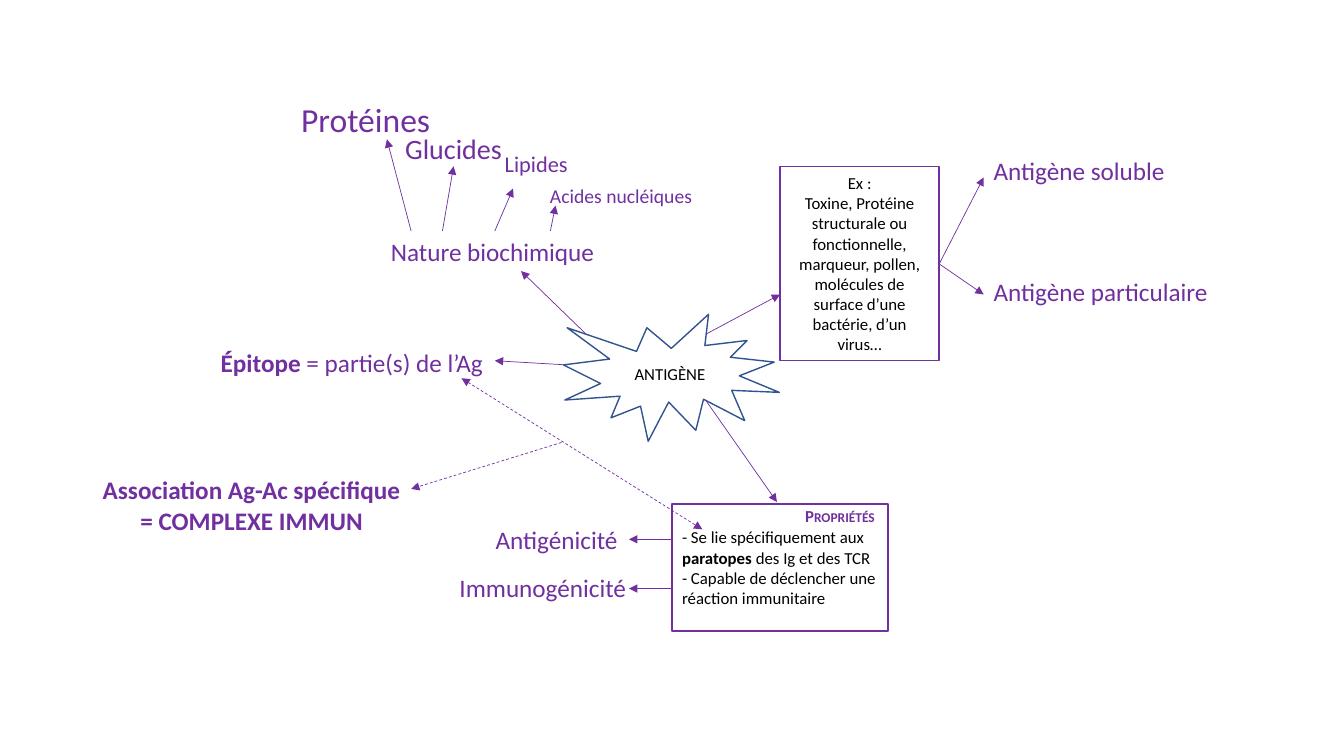
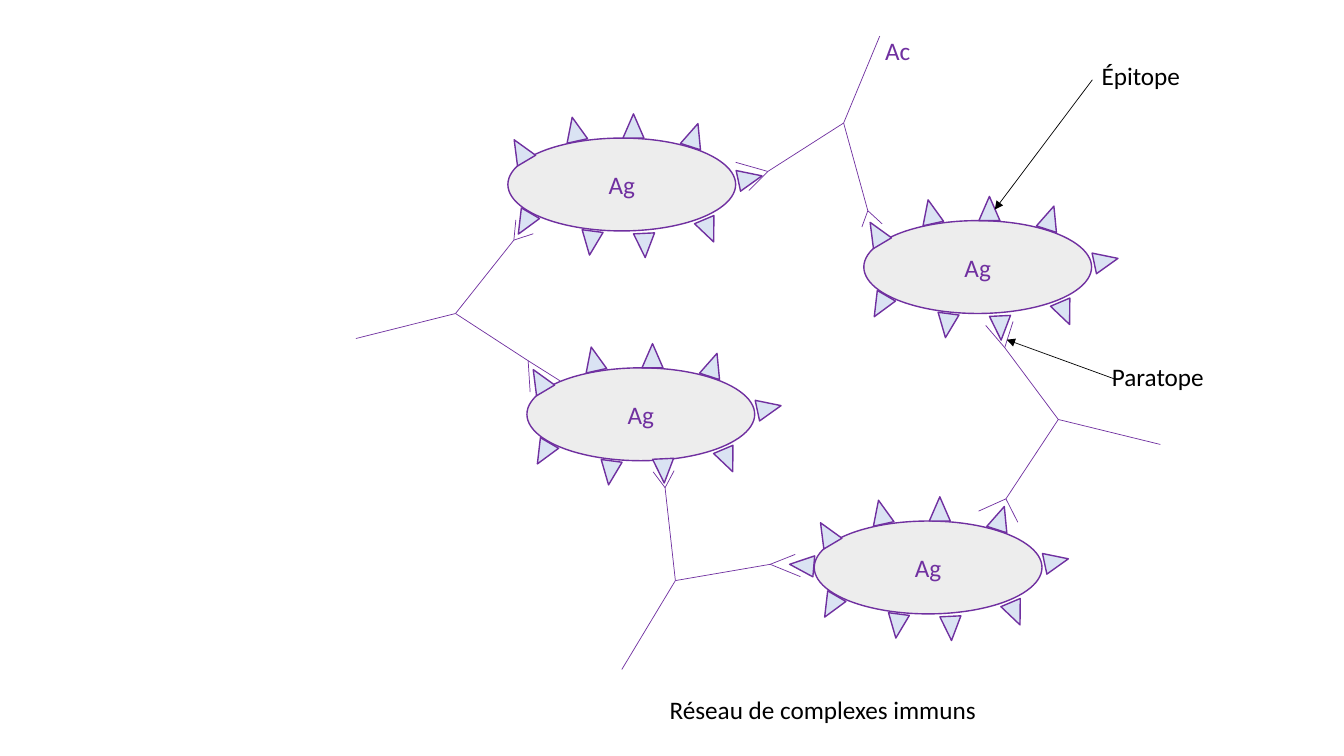
from dataclasses import dataclass
from typing import NamedTuple

from pptx import Presentation
from pptx.dml.color import RGBColor
from pptx.enum.dml import MSO_LINE
from pptx.enum.shapes import MSO_CONNECTOR, MSO_SHAPE
from pptx.enum.text import MSO_ANCHOR, MSO_AUTO_SIZE, PP_ALIGN
from pptx.oxml.ns import qn
from pptx.oxml.xmlchemy import OxmlElement
from pptx.shapes.autoshape import Shape
from pptx.slide import Slide
from pptx.text.text import TextFrame
from pptx.util import Cm, Pt


@dataclass(frozen=True)
class Theme:
    font: str = "Calibri"
    purple: RGBColor = RGBColor(0x70, 0x30, 0xA0)
    navy: RGBColor = RGBColor(0x31, 0x53, 0x8F)
    black: RGBColor = RGBColor(0, 0, 0)
    white: RGBColor = RGBColor(0xFF, 0xFF, 0xFF)
    antigen_fill: RGBColor = RGBColor(0xED, 0xED, 0xED)
    epitope_fill: RGBColor = RGBColor(0xDA, 0xE3, 0xF3)
    small: int = 12
    normal: int = 18
    outline: float = 1
    thin: float = 0.5


THEME = Theme()


class Point(NamedTuple):
    x: float
    y: float


class Box(NamedTuple):
    left: float
    top: float
    width: float
    height: float = 1.02

    def lengths(self) -> tuple[Cm, ...]:
        return tuple(Cm(value) for value in self)


@dataclass(frozen=True)
class Label:
    text: str
    box: Box
    size: int = THEME.normal
    color: RGBColor = THEME.purple
    align: PP_ALIGN = PP_ALIGN.LEFT
    small_caps: bool = False


@dataclass(frozen=True)
class Line:
    start: Point
    end: Point
    color: RGBColor = THEME.purple
    tail: bool = True
    head: bool = False
    dashed: bool = False


class Spike(NamedTuple):
    """Epitope position relative to its antigen, with its rotation."""
    left: float
    top: float
    rotation: float


class Antigen(NamedTuple):
    left: float
    top: float
    bottom_spike_top: float = 2.4


class Arm(NamedTuple):
    joint: Point
    prongs: tuple[Point, Point]


class Antibody(NamedTuple):
    hub: Point
    stem_end: Point
    arms: tuple[Arm, Arm]


ARROWS = (
    Line(Point(14.76, 8.41), Point(13.13, 6.83)),
    Line(Point(17.78, 10.08), Point(19.58, 12.65)),
    Line(Point(17.81, 8.41), Point(19.66, 7.42)),
    Line(Point(23.67, 6.65), Point(24.79, 4.47)),
    Line(Point(23.67, 6.65), Point(24.79, 7.42)),
    Line(Point(10.36, 5.82), Point(9.75, 3.51)),
    Line(Point(11.15, 5.82), Point(11.43, 4.19)),
    Line(Point(12.47, 5.82), Point(12.93, 4.75)),
    Line(Point(13.87, 5.82), Point(14, 5.18)),
    Line(Point(16.94, 13.59), Point(15.85, 13.59)),
    Line(Point(16.94, 14.83), Point(15.85, 14.83)),
    Line(Point(14.2, 9.19), Point(12.47, 9.09)),
    Line(Point(14.15, 11.15), Point(10.36, 12.32), dashed=True),
    Line(Point(11.63, 9.53), Point(17.7, 13.34), head=True, dashed=True),
)

CONCEPT_LABELS = (
    Label("Nature biochimique", Box(9.6, 5.82, 5.69)),
    Label("Protéines", Box(7.34, 2.36, 3.81, 1.27), 24),
    Label("Glucides", Box(9.96, 3.2, 2.97, 1.12), 20),
    Label("Lipides", Box(12.47, 3.66, 2.11, 0.94), 16),
    Label("Acides nucléiques", Box(13.61, 4.52, 4.14, 0.86), 14),
    Label("Antigène soluble", Box(24.79, 3.78, 4.88)),
    Label("Antigène particulaire", Box(24.79, 6.83, 5.97)),
    Label("Immunogénicité", Box(11.33, 14.3, 4.75)),
    Label("Antigénicité", Box(12.24, 13.08, 3.78)),
    Label("*Épitope* = partie(s) de l’Ag", Box(5.31, 8.64, 7.16)),
    Label("*Association Ag-Ac spécifique*\n*= COMPLEXE IMMUN*",
          Box(2.29, 11.84, 8.1, 1.8), align=PP_ALIGN.CENTER),
    Label("*Propriétés*", Box(20.04, 12.62, 2.34, 0.76), THEME.small, small_caps=True),
)

EXAMPLES = Label(
    "Ex :\nToxine, Protéine structurale ou fonctionnelle, marqueur, pollen, "
    "molécules de surface d’une bactérie, d’un virus…",
    Box(19.66, 4.19, 4.01, 4.9), THEME.small, THEME.black, PP_ALIGN.CENTER)
PROPERTIES = Label(
    "- Se lie spécifiquement aux *paratopes* des Ig et des TCR\n"
    "- Capable de déclencher une réaction immunitaire",
    Box(16.94, 12.7, 5.44, 3.2), THEME.small, THEME.black)
CENTRAL_ANTIGEN = Label("ANTIGÈNE", Box(14.2, 7.92, 5.44, 3.2),
                        THEME.small, THEME.black, PP_ALIGN.CENTER)

ANTIGEN_WIDTH, ANTIGEN_HEIGHT = 5.74, 2.34
SPIKE_WIDTH, SPIKE_HEIGHT = 0.53, 0.61
SPIKES = (
    Spike(2.9, -0.61, 0), Spike(4.43, -0.38, 17.9), Spike(1.42, -0.53, 347.6),
    Spike(0.05, 0, 329.3), Spike(5.84, 0.71, 78), Spike(4.8, 2.03, 157.1),
    Spike(1.83, 2.34, 187.4), Spike(0.15, 1.85, 210.2),
)
ANTIGENS = (Antigen(13.28, 9.27, 2.29), Antigen(20.52, 13.13),
            Antigen(21.77, 5.56), Antigen(12.8, 3.48))
BOUND_SPIKE = Spike(19.94, 13.94, 274.9)

ANTIBODIES = (
    Antibody(Point(17.02, 14.63), Point(15.67, 16.87), (
        Arm(Point(16.76, 12.29), (Point(16.99, 11.86), Point(16.46, 11.89))),
        Arm(Point(19.41, 14.22), (Point(20.04, 13.97), Point(20.17, 14.53))))),
    Antibody(Point(21.26, 3.1), Point(22.17, 0.91), (
        Arm(Point(21.87, 5.31), (Point(21.72, 5.72), Point(22.23, 5.64))),
        Arm(Point(19.35, 4.32), (Point(18.87, 4.8), Point(18.54, 4.09))))),
    Antibody(Point(26.67, 10.57), Point(29.24, 11.2), (
        Arm(Point(25.35, 12.57), (Point(24.66, 12.88), Point(25.65, 13.16))),
        Arm(Point(25.32, 8.76), (Point(24.84, 8.2), Point(25.53, 8.1))))),
    Antibody(Point(11.48, 7.9), Point(8.97, 8.53), (
        Arm(Point(12.95, 6.05), (Point(13.44, 5.89), Point(13, 5.54))),
        Arm(Point(13.31, 9.09), (Point(14.12, 9.6), Point(13.36, 9.88))))),
)

NETWORK_LABELS = (
    Label("Ac", Box(21.95, 0.76, 1.35), align=PP_ALIGN.CENTER),
    Label("Épitope", Box(27.1, 1.4, 3.3), color=THEME.black, align=PP_ALIGN.CENTER),
    Label("Paratope", Box(27.53, 8.99, 3.3), color=THEME.black, align=PP_ALIGN.CENTER),
)
NETWORK_TITLE = Label("Réseau de complexes immuns", Box(15.67, 17.37, 10.13),
                      color=THEME.black, align=PP_ALIGN.CENTER)
POINTERS = (
    Line(Point(27.53, 2.01), Point(25.07, 5.28), THEME.black),
    Line(Point(28.09, 9.55), Point(25.37, 8.56), THEME.black),
)


def write_text(text_frame: TextFrame, label: Label) -> None:
    """Write one paragraph per line; parts between asterisks are bold."""
    text_frame.text = label.text
    for paragraph in text_frame.paragraphs:
        parts = paragraph.text.split("*")
        paragraph.text = ""
        paragraph.alignment = label.align
        for index, part in enumerate(parts):
            if not part:
                continue
            run = paragraph.add_run()
            run.text = part
            run.font.name = THEME.font
            run.font.size = Pt(label.size)
            run.font.bold = index % 2 == 1
            run.font.color.rgb = label.color
            if label.small_caps:
                run.font._element.set("cap", "small")


def add_label(slide: Slide, label: Label) -> None:
    text_frame = slide.shapes.add_textbox(*label.box.lengths()).text_frame
    text_frame.word_wrap = False
    write_text(text_frame, label)


def add_figure(shapes, preset: MSO_SHAPE, box: Box, fill: RGBColor | None,
               line: RGBColor = THEME.purple) -> Shape:
    shape = shapes.add_shape(preset, *box.lengths())
    shape.shadow.inherit = False
    if fill is None:
        shape.fill.background()
    else:
        shape.fill.solid()
        shape.fill.fore_color.rgb = fill
    shape.line.color.rgb = line
    shape.line.width = Pt(THEME.outline)
    return shape


def add_line(slide: Slide, line: Line) -> None:
    connector = slide.shapes.add_connector(
        MSO_CONNECTOR.STRAIGHT, *(Cm(value) for value in line.start + line.end))
    connector.line.color.rgb = line.color
    connector.line.width = Pt(THEME.thin)
    if line.dashed:
        connector.line.dash_style = MSO_LINE.DASH
    properties = connector.element.spPr
    outline = properties.find(qn("a:ln"))
    for tag, wanted in (("a:headEnd", line.head), ("a:tailEnd", line.tail)):
        if wanted:
            arrowhead = OxmlElement(tag)
            arrowhead.set("type", "triangle")
            outline.append(arrowhead)
    properties.append(OxmlElement("a:effectLst"))


def add_spike(shapes, spike: Spike) -> None:
    box = Box(spike.left, spike.top, SPIKE_WIDTH, SPIKE_HEIGHT)
    shape = add_figure(shapes, MSO_SHAPE.ISOSCELES_TRIANGLE, box, THEME.epitope_fill)
    shape.rotation = spike.rotation


def add_antigen(slide: Slide, antigen: Antigen) -> None:
    shapes = slide.shapes.add_group_shape().shapes
    box = Box(antigen.left, antigen.top, ANTIGEN_WIDTH, ANTIGEN_HEIGHT)
    body = add_figure(shapes, MSO_SHAPE.OVAL, box, THEME.antigen_fill)
    write_text(body.text_frame, Label("Ag", box, align=PP_ALIGN.CENTER))
    for spike in SPIKES + (Spike(3.18, antigen.bottom_spike_top, 177.3),):
        add_spike(shapes, Spike(antigen.left + spike.left,
                                antigen.top + spike.top, spike.rotation))


def add_antibody(slide: Slide, antibody: Antibody) -> None:
    segments = [(antibody.hub, antibody.stem_end)]
    for arm in antibody.arms:
        segments.append((antibody.hub, arm.joint))
        segments.extend((arm.joint, prong) for prong in arm.prongs)
    for start, end in segments:
        add_line(slide, Line(start, end, tail=False))


def build_concept_map(slide: Slide) -> None:
    for preset, label, fill, line in (
        (MSO_SHAPE.EXPLOSION1, CENTRAL_ANTIGEN, None, THEME.navy),
        (MSO_SHAPE.RECTANGLE, EXAMPLES, THEME.white, THEME.purple),
        (MSO_SHAPE.RECTANGLE, PROPERTIES, THEME.white, THEME.purple),
    ):
        shape = add_figure(slide.shapes, preset, label.box, fill, line)
        write_text(shape.text_frame, label)
    for arrow in ARROWS:
        add_line(slide, arrow)
    for label in CONCEPT_LABELS:
        add_label(slide, label)


def build_network(slide: Slide) -> None:
    title = slide.shapes.title
    title.left, title.top, title.width, title.height = NETWORK_TITLE.box.lengths()
    title.text_frame.auto_size = MSO_AUTO_SIZE.NONE
    title.text_frame.vertical_anchor = MSO_ANCHOR.TOP
    write_text(title.text_frame, NETWORK_TITLE)
    for antigen in ANTIGENS:
        add_antigen(slide, antigen)
    for antibody in ANTIBODIES:
        add_antibody(slide, antibody)
    add_spike(slide.shapes, BOUND_SPIKE)
    for pointer in POINTERS:
        add_line(slide, pointer)
    for label in NETWORK_LABELS:
        add_label(slide, label)


def main() -> None:
    presentation = Presentation()
    presentation.slide_width, presentation.slide_height = Cm(33.87), Cm(19.05)
    title_only, blank = presentation.slide_layouts[5], presentation.slide_layouts[6]
    build_concept_map(presentation.slides.add_slide(blank))
    build_network(presentation.slides.add_slide(title_only))
    presentation.save("out.pptx")


if __name__ == "__main__":
    main()
